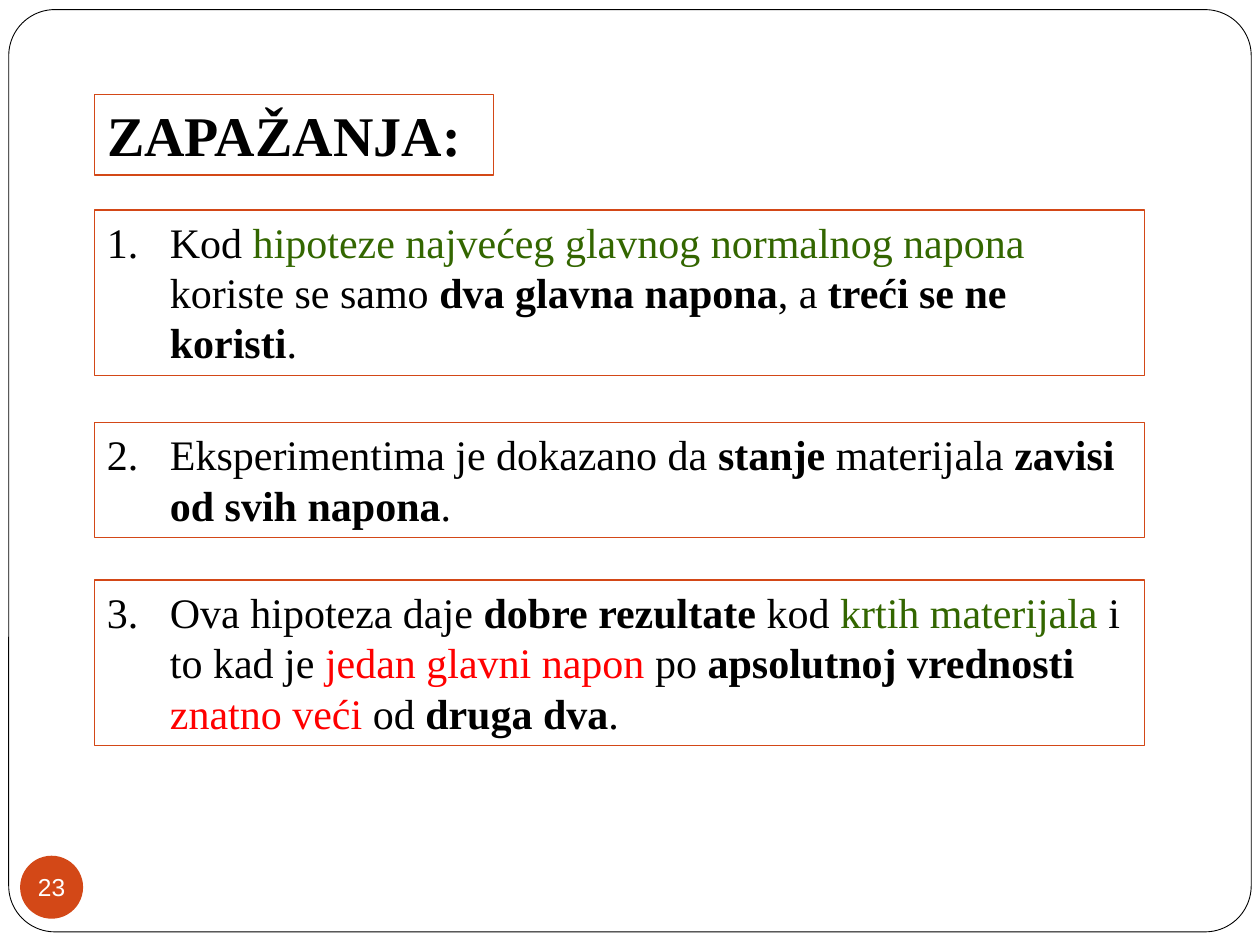
"""Build the slide of observations on the maximum principal stress hypothesis."""
from lxml.etree import SubElement
from pptx import Presentation
from pptx.dml.color import RGBColor
from pptx.enum.shapes import MSO_SHAPE
from pptx.enum.text import MSO_ANCHOR, MSO_AUTO_SIZE, PP_ALIGN
from pptx.oxml.ns import qn
from pptx.util import Pt

COLORS = {"black": "000000", "white": "FFFFFF", "accent": "D34817",
          "green": "336600", "red": "FF0000"}
LEFT, WIDTH, INDENT = 54, 600, 36

POINTS = [
    (120, 94.5, [
        ("Kod ", "black", False),
        ("hipoteze najvećeg glavnog normalnog napona ", "green", False),
        ("koriste se samo ", "black", False),
        ("dva glavna napona", "black", True),
        (", a ", "black", False),
        ("treći se ne koristi", "black", True),
        (".", "black", False)]),
    (241.5, 65.5, [
        ("Eksperimentima je dokazano da ", "black", False),
        ("stanje", "black", True),
        (" materijala ", "black", False),
        ("zavisi od svih napona", "black", True),
        (".", "black", False)]),
    (331.5, 94.5, [
        ("Ova hipoteza daje ", "black", False),
        ("dobre rezultate ", "black", True),
        ("kod ", "black", False),
        ("krtih materijala ", "green", False),
        ("i to kad je ", "black", False),
        ("jedan glavni napon ", "red", False),
        ("po ", "black", False),
        ("apsolutnoj vrednosti ", "black", True),
        ("znatno veći ", "red", False),
        ("od ", "black", False),
        ("druga dva", "black", True),
        (".", "black", False)]),
]


class Deck:
    """Holds the style and the current slide."""

    def __init__(self, prs):
        """Start a title-only slide."""
        self.font = "Times New Roman"
        self.s = prs.slides.add_slide(prs.slide_layouts[5])

    def color(self, name):
        """Return a named colour."""
        return RGBColor.from_string(COLORS[name])

    def outline(self, sp, name, width):
        """Give a shape a solid outline."""
        sp.line.color.rgb = self.color(name)
        sp.line.width = Pt(width)

    def run(self, p, text, size, color="black", bold=False, font=None):
        """Add one styled run."""
        r = p.add_run()
        r.text = text
        r.font.name = font or self.font
        r.font.size = Pt(size)
        r.font.bold = bold
        r.font.color.rgb = self.color(color)

    def shape(self, kind, box, fill):
        """Add a filled preset shape without outline or shadow."""
        sp = self.s.shapes.add_shape(kind, *map(Pt, box))
        sp.shadow.inherit = False
        sp.fill.solid()
        sp.fill.fore_color.rgb = self.color(fill)
        sp.line.fill.background()
        return sp

    def frame(self, box):
        """Add the rounded slide frame."""
        sp = self.shape(MSO_SHAPE.ROUNDED_RECTANGLE, box, "white")
        sp.adjustments[0] = 0.05
        self.outline(sp, "black", 0.5)

    def badge(self, box, number):
        """Add the round slide number badge."""
        tf = self.shape(MSO_SHAPE.OVAL, box, "accent").text_frame
        tf.margin_left = tf.margin_right = tf.margin_top = tf.margin_bottom = 0
        tf.word_wrap = False
        tf.vertical_anchor = MSO_ANCHOR.MIDDLE
        p = tf.paragraphs[0]
        p.alignment = PP_ALIGN.CENTER
        self.run(p, number, 14, "white", font="Arial")

    def outlined_text(self, sp, auto_size):
        """Outline a text shape and return its first paragraph."""
        self.outline(sp, "accent", 0.75)
        tf = sp.text_frame
        tf.word_wrap = True
        tf.auto_size = auto_size
        tf.vertical_anchor = MSO_ANCHOR.TOP
        p = tf.paragraphs[0]
        p.alignment = PP_ALIGN.LEFT
        return p

    def title(self, box, text):
        """Place the title above the frame and fill it."""
        sp = self.s.shapes.title
        self.s.shapes.element.append(sp.element)
        sp.left, sp.top, sp.width, sp.height = map(Pt, box)
        self.run(self.outlined_text(sp, MSO_AUTO_SIZE.NONE), text, 32, bold=True)

    def point(self, number, top, height, runs):
        """Add one numbered point in an outlined box."""
        sp = self.s.shapes.add_textbox(Pt(LEFT), Pt(top), Pt(WIDTH), Pt(height))
        p = self.outlined_text(sp, MSO_AUTO_SIZE.SHAPE_TO_FIT_TEXT)
        pPr = p._p.get_or_add_pPr()
        pPr.set("marL", str(Pt(INDENT)))
        pPr.set("indent", str(-Pt(INDENT)))
        SubElement(pPr, qn("a:buAutoNum"), type="arabicPeriod", startAt=str(number))
        for text, color, bold in runs:
            self.run(p, text, 24, color, bold)


def main():
    """Build and save the slide."""
    prs = Presentation()
    prs.slide_width, prs.slide_height = Pt(720), Pt(540)
    deck = Deck(prs)
    deck.frame((5, 5.5, 710, 527))
    deck.badge((11.5, 489, 36, 36), "23")
    deck.title((LEFT, 54, 228, 46), "ZAPAŽANJA:")
    for number, (top, height, runs) in enumerate(POINTS, 1):
        deck.point(number, top, height, runs)
    prs.save("out.pptx")


if __name__ == "__main__":
    main()
